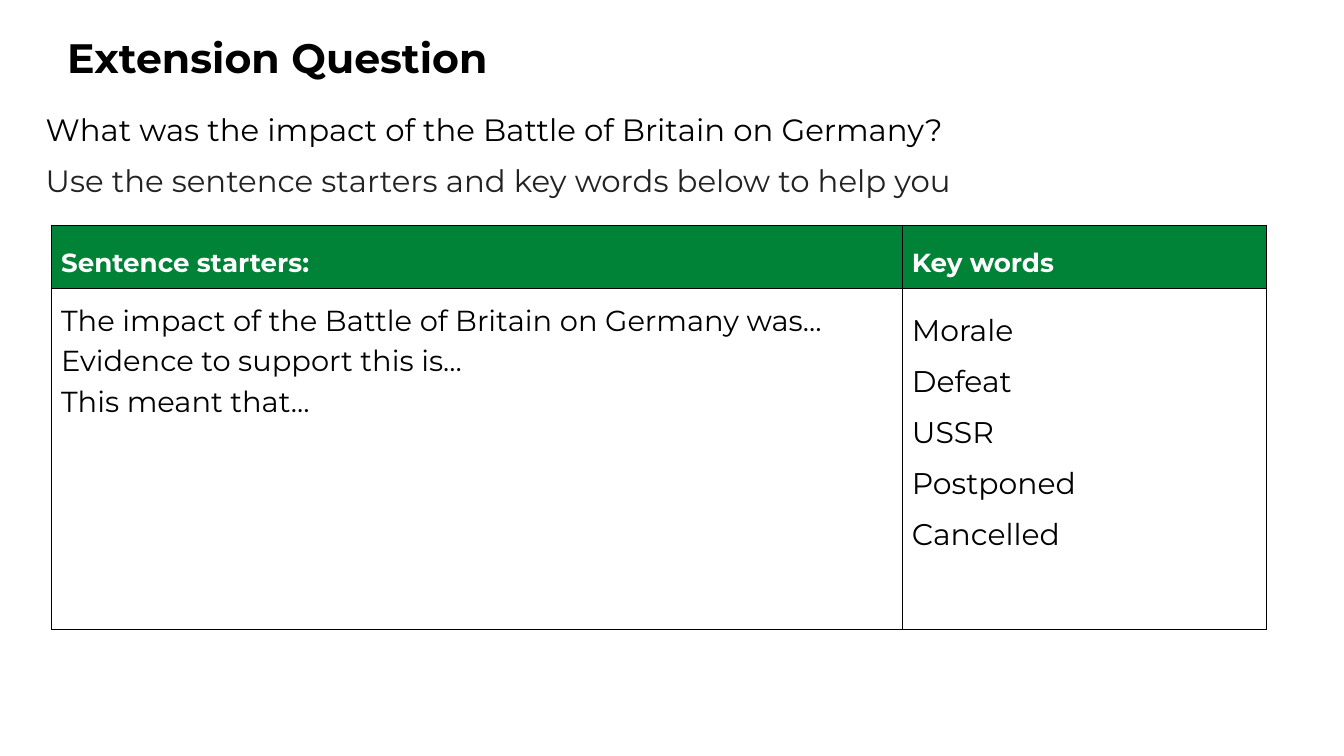
import pptx
import pptx.dml.color
import pptx.enum.text
import pptx.oxml
import pptx.oxml.ns
import pptx.util
from pptx.util import Inches

FONT = "Montserrat"
COLORS = {
    "black": "000000",
    "white": "FFFFFF",
    "charcoal": "222222",
    "green": "008237",
}
STARTERS = [
    "The impact of the Battle of Britain on Germany was…",
    "Evidence to support this is…",
    "This meant that…",
]
KEY_WORDS = ["Morale", "Defeat", "USSR", "Postponed", "Cancelled"]


def rgb(color):
    return pptx.dml.color.RGBColor.from_string(COLORS[color])


def write_text(frame, lines, size, color="black", bold=False, spacing=1.4):
    """Write one paragraph per line, after any text already in the frame."""
    for line in lines:
        paragraph = frame.paragraphs[0] if not frame.text else frame.add_paragraph()
        paragraph.alignment = pptx.enum.text.PP_ALIGN.LEFT
        paragraph.line_spacing = spacing
        paragraph.space_before = paragraph.space_after = pptx.util.Pt(0)
        run = paragraph.add_run()
        run.text = line
        run.font.name = FONT
        run.font.size = pptx.util.Pt(size)
        run.font.bold = bold
        run.font.color.rgb = rgb(color)


def set_frame(frame, margin):
    frame.word_wrap = True
    frame.auto_size = pptx.enum.text.MSO_AUTO_SIZE.NONE
    frame.vertical_anchor = pptx.enum.text.MSO_ANCHOR.TOP
    frame.margin_left = frame.margin_right = Inches(margin)
    frame.margin_top = frame.margin_bottom = Inches(margin)


def set_borders(cell, color="black", width=1):
    properties = cell._tc.get_or_add_tcPr()
    for index, side in enumerate(("lnL", "lnR", "lnT", "lnB")):
        border = pptx.oxml.parse_xml(
            f'<a:{side} {pptx.oxml.ns.nsdecls("a")} w="{pptx.util.Pt(width)}">'
            f'<a:solidFill><a:srgbClr val="{COLORS[color]}"/></a:solidFill>'
            f'</a:{side}>'
        )
        properties.insert(index, border)


def fill_cell(cell, lines, fill=None, **text_format):
    cell.margin_left = cell.margin_right = Inches(0.14)
    cell.margin_top = cell.margin_bottom = Inches(0.14)
    cell.vertical_anchor = pptx.enum.text.MSO_ANCHOR.TOP
    if fill:
        cell.fill.solid()
        cell.fill.fore_color.rgb = rgb(fill)
    else:
        cell.fill.background()
    set_borders(cell)
    write_text(cell.text_frame, lines, **text_format)


def add_title(slide, text):
    title = slide.shapes.title
    title.left, title.top = Inches(1), Inches(0.37)
    title.width, title.height = Inches(17.99), Inches(1.78)
    set_frame(title.text_frame, 0)
    write_text(title.text_frame, [text], size=44, bold=True, spacing=1.15)


def add_question(slide, question, hint):
    box = slide.shapes.add_textbox(
        Inches(0.48), Inches(1.36), Inches(18.37), Inches(1.78))
    set_frame(box.text_frame, 0.2)
    write_text(box.text_frame, [question], size=33, spacing=1.15)
    write_text(box.text_frame, [hint], size=33, color="charcoal")


def add_support_table(slide):
    widths, heights = (12.66, 5.42), (0.94, 5.07)
    table = slide.shapes.add_table(
        2, 2, Inches(0.77), Inches(3.35),
        Inches(sum(widths)), Inches(sum(heights))).table
    for column, width in zip(table.columns, widths):
        column.width = Inches(width)
    for row, height in zip(table.rows, heights):
        row.height = Inches(height)

    # Header row
    for column, heading in enumerate(("Sentence starters:", "Key words")):
        fill_cell(table.cell(0, column), [heading], fill="green",
                  size=28, color="white", bold=True)

    # Writing support
    fill_cell(table.cell(1, 0), STARTERS, size=31, spacing=1.15)
    fill_cell(table.cell(1, 1), KEY_WORDS, size=32)


def main():
    deck = pptx.Presentation()
    deck.slide_width, deck.slide_height = Inches(20), Inches(11.25)
    slide = deck.slides.add_slide(deck.slide_layouts[5])
    add_title(slide, "Extension Question")
    add_support_table(slide)
    add_question(
        slide,
        "What was the impact of the Battle of Britain on Germany?",
        "Use the sentence starters and key words below to help you",
    )
    deck.save("out.pptx")


if __name__ == "__main__":
    main()
